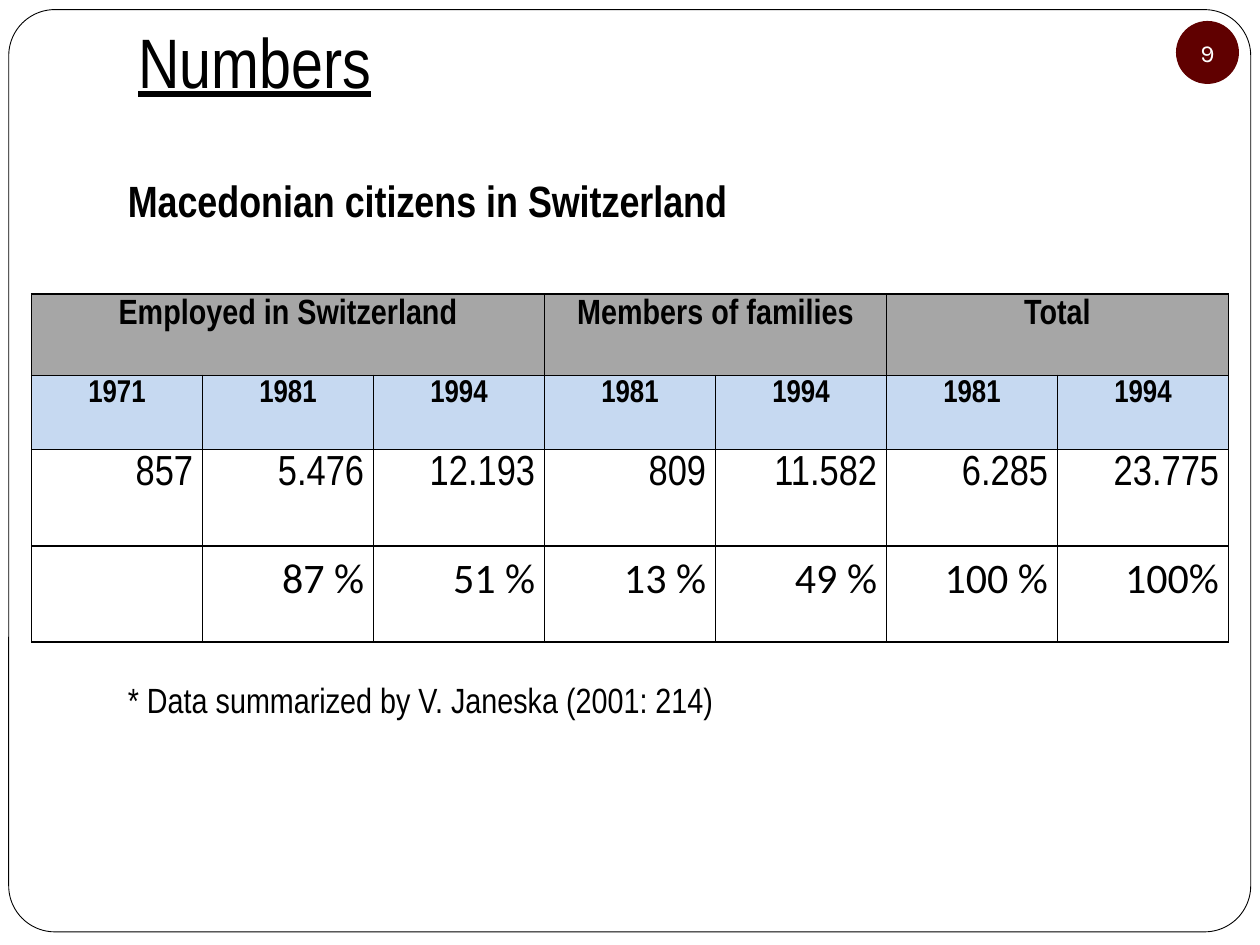
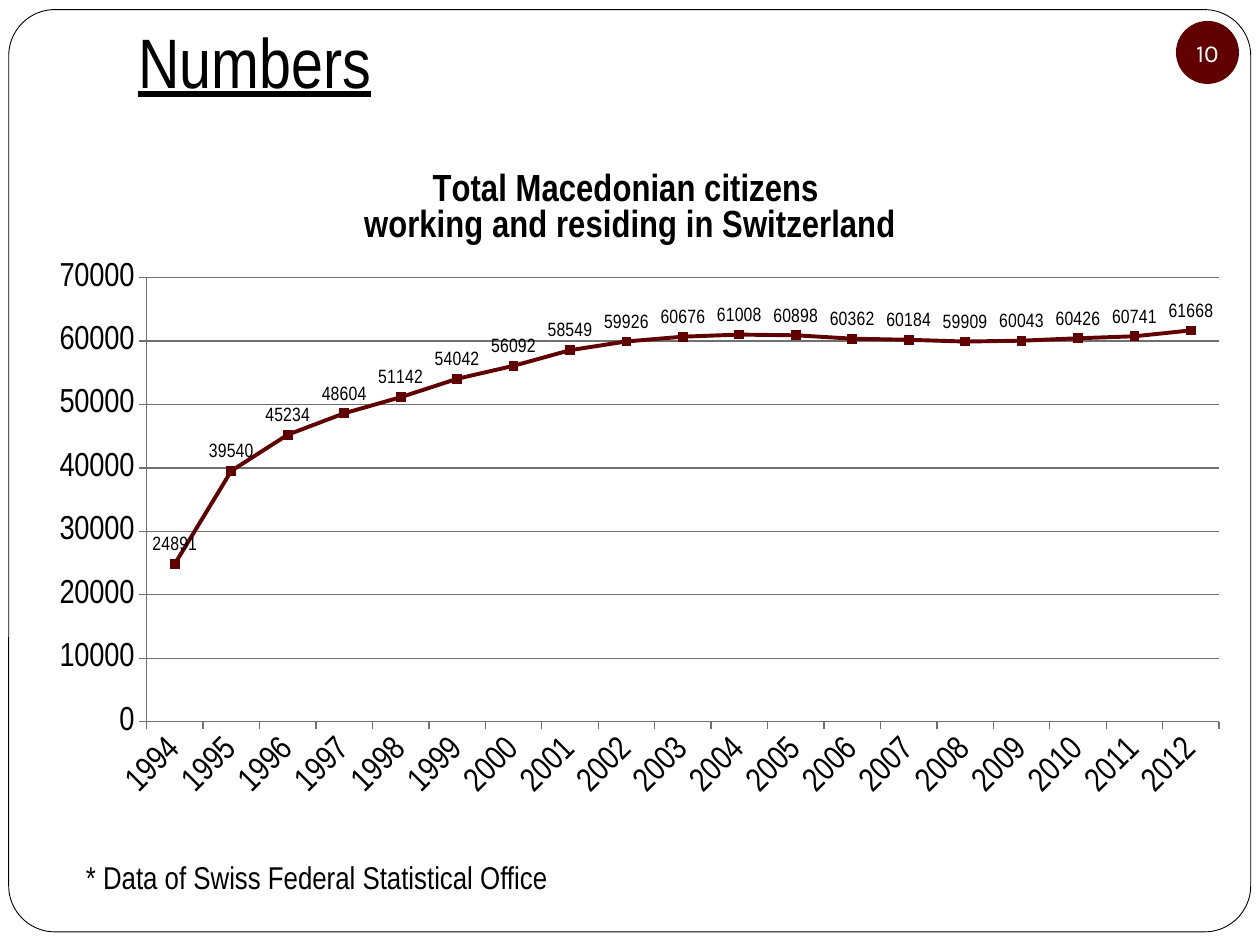
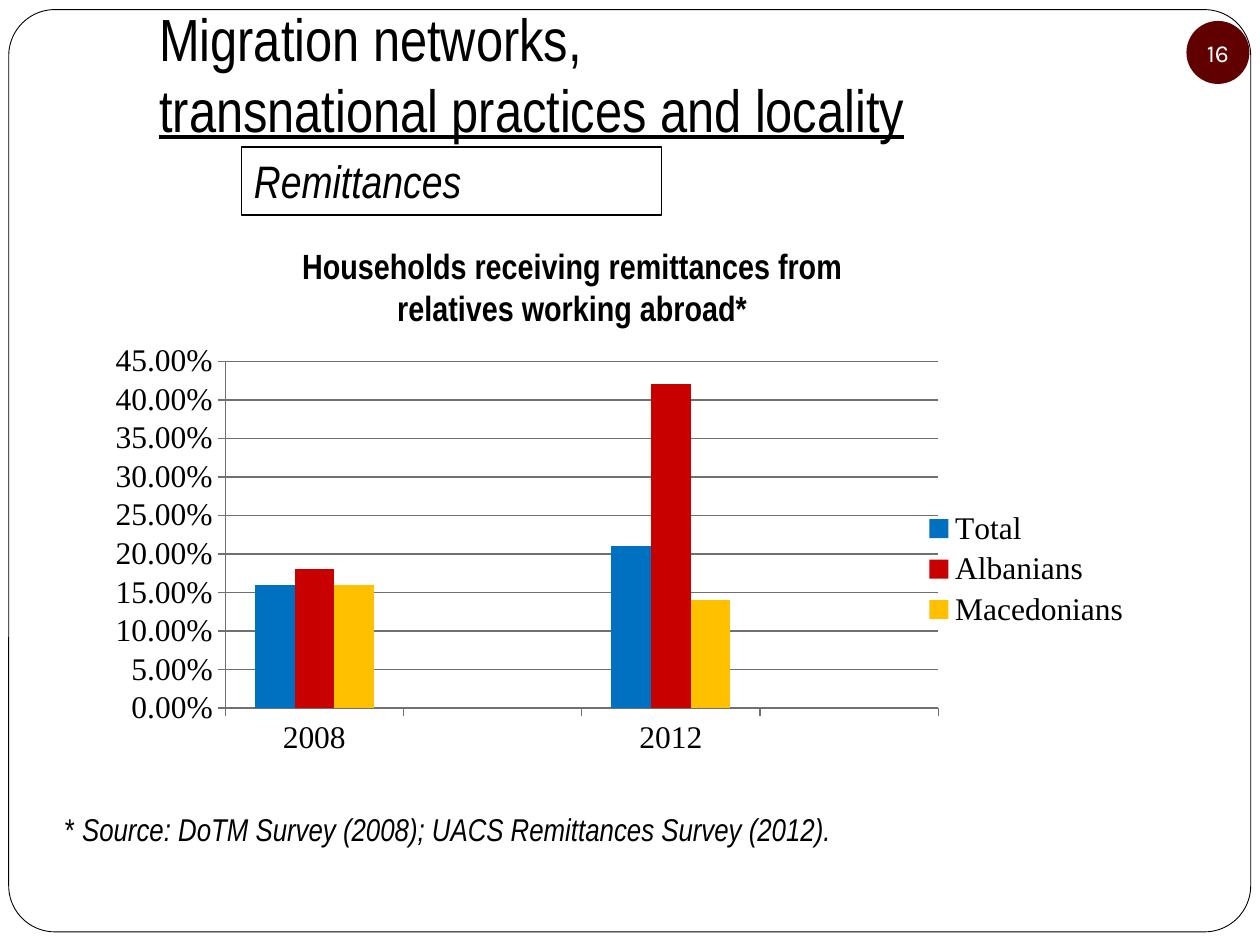
from lxml.etree import SubElement
from pptx import Presentation
from pptx.chart.data import CategoryChartData
from pptx.dml.color import RGBColor
from pptx.enum.chart import XL_CHART_TYPE as ChartType, XL_LABEL_POSITION as LabelPosition
from pptx.enum.chart import XL_LEGEND_POSITION as LegendPosition, XL_MARKER_STYLE as MarkerStyle
from pptx.enum.chart import XL_TICK_MARK as TickMark
from pptx.enum.shapes import MSO_SHAPE as Shape
from pptx.enum.text import MSO_ANCHOR as Anchor, PP_ALIGN as Align
from pptx.oxml import parse_xml
from pptx.oxml.ns import nsdecls, qn
from pptx.util import Pt

# Shared style
COLORS = {
    "text": "000000", "paper": "FFFFFF", "accent": "600000", "grid": "707070",
    "head": "A6A6A6", "years": "C6D9F1",
    "total": "0070C0", "albanians": "C80000", "macedonians": "FFC000",
}
NARROW, SERIF, BADGE_FONT, PERCENT_FONT = "Arial Narrow", "Times New Roman", "Karla", "Calibri"
TEXT_MARGINS = (7.2, 3.6, 7.2, 3.6)
TITLE_MARGINS = (7.2, 3.6, 7.2, 7.2)
FRAME_BOX = (5, 5.5, 709.7, 527)
NUMBERS_TITLE_BOX = (72, 6, 612, 60)

# Content: citizens table
GROUPS = [("Employed in Switzerland", 3), ("Members of families", 2), ("Total", 2)]
YEARS = ["1971", "1981", "1994", "1981", "1994", "1981", "1994"]
COUNTS = ["857", "5.476", "12.193", "809", "11.582", "6.285", "23.775"]
SHARES = ["", "87 %", "51 %", "13 %", "49 %", "100 %", "100%"]
ROW_HEIGHTS = [46.5, 42.3, 55.1, 55.1]
TABLE_BOX = (18, 168, 684, sum(ROW_HEIGHTS))

# Content: citizens by year
CITIZENS_TITLE = ["Total Macedonian citizens ", "working and residing in Switzerland"]
CITIZENS = [24891, 39540, 45234, 48604, 51142, 54042, 56092, 58549, 59926, 60676,
            61008, 60898, 60362, 60184, 59909, 60043, 60426, 60741, 61668]
CITIZEN_YEARS = [str(1994 + index) for index in range(len(CITIZENS))]

# Content: remittances
SURVEYS = ["2008", "", "2012", ""]
HOUSEHOLDS = [
    ("Total", [0.16, None, 0.21, None], "total"),
    ("Albanians", [0.18, None, 0.42, None], "albanians"),
    ("Macedonians", [0.16, None, 0.14, None], "macedonians"),
]


def color(name):
    return RGBColor.from_string(COLORS[name])


def points(box):
    return [Pt(length) for length in box]


def style_font(font, size, name=NARROW, color_name="text", bold=False, italic=False):
    font.size, font.name, font.bold, font.italic = Pt(size), name, bold, italic
    font.color.rgb = color(color_name)


def set_margins(target, margins):
    (target.margin_left, target.margin_top,
     target.margin_right, target.margin_bottom) = points(margins)


def write_text(shape, text, size, align=Align.LEFT, anchor=Anchor.TOP,
               margins=TEXT_MARGINS, wrap=True, **style):
    frame = shape.text_frame
    frame.word_wrap, frame.vertical_anchor = wrap, anchor
    set_margins(frame, margins)
    paragraph = frame.paragraphs[0]
    paragraph.text, paragraph.alignment = text, align
    style_font(paragraph.font, size, **style)
    return paragraph


def add_text(slide, box, text, size, **style):
    return write_text(slide.shapes.add_textbox(*points(box)), text, size, **style)


def add_shape(slide, preset, box, fill, line_width=0):
    shape = slide.shapes.add_shape(preset, *points(box))
    shape.shadow.inherit = False
    shape.fill.solid()
    shape.fill.fore_color.rgb = color(fill)
    if line_width:
        shape.line.width = Pt(line_width)
        shape.line.color.rgb = color("text")
    else:
        shape.line.fill.background()
    return shape


def add_framed_slide(presentation):
    slide = presentation.slides.add_slide(presentation.slide_layouts[6])
    add_shape(slide, Shape.ROUNDED_RECTANGLE, FRAME_BOX, "paper", 0.5).adjustments[0] = 0.05
    return slide


def add_title(slide, box, underlined, size, lead=""):
    paragraph = add_text(slide, box, lead, size, anchor=Anchor.BOTTOM, margins=TITLE_MARGINS)
    if lead:
        paragraph.add_line_break()
    run = paragraph.add_run()
    run.text, run.font.underline = underlined, True


def add_badge(slide, number, left=672):
    badge = add_shape(slide, Shape.OVAL, (left, 12, 36, 36), "accent")
    write_text(badge, str(number), 14, Align.CENTER, Anchor.MIDDLE, (0, 0, 0, 0),
               wrap=False, name=BADGE_FONT, color_name="paper")


# Table
def add_borders(cell):
    properties = cell._tc.get_or_add_tcPr()
    for index, side in enumerate(("lnL", "lnR", "lnT", "lnB")):
        properties.insert(index, parse_xml(
            f'<a:{side} {nsdecls("a")} w="{Pt(1)}"><a:solidFill>'
            f'<a:srgbClr val="{COLORS["text"]}"/></a:solidFill></a:{side}>'))


def fill_cell(cell, text, size, align, fill=None, **style):
    set_margins(cell, (5.4, 0, 5.4, 0))
    if fill:
        cell.fill.solid()
        cell.fill.fore_color.rgb = color(fill)
    else:
        cell.fill.background()
    paragraph = cell.text_frame.paragraphs[0]
    paragraph.text, paragraph.alignment, paragraph.line_spacing = text, align, 1.15
    style_font(paragraph.font, size, **style)
    add_borders(cell)


def add_citizens_table(slide):
    table = slide.shapes.add_table(len(ROW_HEIGHTS), len(YEARS), *points(TABLE_BOX)).table
    table.first_row = table.horz_banding = False
    for column in table.columns:
        column.width = Pt(TABLE_BOX[2] / len(YEARS))
    for row, height in zip(table.rows, ROW_HEIGHTS):
        row.height = Pt(height)
    heads = [text for name, span in GROUPS for text in [name] + [""] * (span - 1)]
    rows = [
        (heads, dict(size=20, align=Align.CENTER, fill="head", bold=True)),
        (YEARS, dict(size=18, align=Align.CENTER, fill="years", bold=True)),
        (COUNTS, dict(size=24, align=Align.RIGHT)),
        (SHARES, dict(size=24, align=Align.RIGHT, name=PERCENT_FONT)),
    ]
    for row_index, (texts, style) in enumerate(rows):
        for column_index, text in enumerate(texts):
            fill_cell(table.cell(row_index, column_index), text, **style)
    start = 0
    for _, span in GROUPS:
        table.cell(0, start).merge(table.cell(0, start + span - 1))
        start += span


# Charts
def set_plot_layout(chart, box):
    plot_area = chart._chartSpace.chart.plotArea
    for layout in plot_area.findall(qn("c:layout")):
        plot_area.remove(layout)
    layout = parse_xml(f'<c:layout {nsdecls("c")}><c:manualLayout/></c:layout>')
    settings = [("layoutTarget", "inner"), ("xMode", "edge"), ("yMode", "edge")]
    for tag, value in settings + list(zip("xywh", box)):
        SubElement(layout[0], qn(f"c:{tag}")).set("val", str(value))
    plot_area.insert(0, layout)


def add_chart(slide, kind, box, categories, series, plot_box, top, step, number_format,
              axis_size, axis_font):
    data = CategoryChartData()
    data.categories = categories
    for name, values, _ in series:
        data.add_series(name, values)
    chart = slide.shapes.add_chart(kind, *points(box), data).chart
    style_font(chart.font, 18, SERIF)
    chart.has_title = chart.has_legend = False
    chart.plots[0].vary_by_categories = False
    set_plot_layout(chart, plot_box)
    for axis in (chart.category_axis, chart.value_axis):
        axis.major_tick_mark, axis.minor_tick_mark = TickMark.OUTSIDE, TickMark.NONE
        axis.format.line.color.rgb = color("grid")
        style_font(axis.tick_labels.font, axis_size, axis_font)
    values = chart.value_axis
    values.minimum_scale, values.maximum_scale, values.major_unit = 0, top, step
    values.tick_labels.number_format = number_format
    values.tick_labels.number_format_is_linked = False
    values.major_gridlines.format.line.color.rgb = color("grid")
    return chart


def add_citizens_chart(slide):
    chart = add_chart(slide, ChartType.LINE_MARKERS, (18.2, 84.2, 684, 396), CITIZEN_YEARS,
                      [("Series 1", CITIZENS, "accent")], (0.096, 0.188, 0.896, 0.641),
                      70000, 10000, "General", 19, NARROW)
    chart.has_title = True
    frame = chart.chart_title.text_frame
    chart.chart_title.include_in_layout = False
    for index, text in enumerate(CITIZENS_TITLE):
        paragraph = frame.add_paragraph() if index else frame.paragraphs[0]
        paragraph.text = text
        style_font(paragraph.font, 21.6, bold=True)
    chart.category_axis._element.find(qn("c:txPr")).find(qn("a:bodyPr")).set("rot", "-2700000")
    series = chart.plots[0].series[0]
    series.smooth = False
    series.format.line.width = Pt(2.25)
    series.marker.style, series.marker.size = MarkerStyle.SQUARE, 5
    for part in (series.format.line, series.marker.format.line):
        part.color.rgb = color("accent")
    series.marker.format.fill.solid()
    series.marker.format.fill.fore_color.rgb = color("accent")
    labels = series.data_labels
    labels.show_value, labels.position = True, LabelPosition.ABOVE
    style_font(labels.font, 11)


def add_households_chart(slide):
    chart = add_chart(slide, ChartType.COLUMN_CLUSTERED, (65.8, 196.2, 588, 258), SURVEYS,
                      HOUSEHOLDS, (0.107, 0.04, 0.693, 0.768), 0.45, 0.05, "0.00%", 18, SERIF)
    chart.has_legend = True
    chart.legend.position, chart.legend.include_in_layout = LegendPosition.RIGHT, False
    style_font(chart.legend.font, 18, SERIF)
    chart.plots[0].gap_width, chart.plots[0].overlap = 150, 0
    for series, (_, _, color_name) in zip(chart.plots[0].series, HOUSEHOLDS):
        series.format.fill.solid()
        series.format.fill.fore_color.rgb = color(color_name)


# Slides
def build_table_slide(presentation):
    slide = add_framed_slide(presentation)
    add_title(slide, NUMBERS_TITLE_BOX, "Numbers", 40)
    add_citizens_table(slide)
    add_text(slide, (66, 384, 546, 31.5), "* Data summarized by V. Janeska (2001: 214)", 20)
    add_text(slide, (66, 96, 546, 37.5), "Macedonian citizens in Switzerland", 25, bold=True)
    add_badge(slide, 9)


def build_citizens_slide(presentation):
    slide = add_framed_slide(presentation)
    add_citizens_chart(slide)
    add_title(slide, NUMBERS_TITLE_BOX, "Numbers", 40)
    add_text(slide, (42, 486.5, 546, 29), "* Data of Swiss Federal Statistical Office", 18)
    add_badge(slide, 10)


def build_remittances_slide(presentation):
    slide = add_framed_slide(presentation)
    add_households_chart(slide)
    add_title(slide, (84, 6, 612, 84), "transnational practices and locality", 34,
              lead="Migration networks, ")
    topic = add_shape(slide, Shape.RECTANGLE, (138, 84, 240, 39), "paper", 1)
    write_text(topic, "Remittances", 26, italic=True)
    add_text(slide, (162, 136, 330, 55.5),
             "Households receiving remittances from relatives working abroad*", 20,
             align=Align.CENTER, bold=True)
    source = add_text(slide, (30, 459.5, 660, 29), "* ", 18)
    run = source.add_run()
    run.text = "Source: DoTM Survey (2008); UACS Remittances Survey (2012)."
    run.font.italic = True
    add_badge(slide, 16, left=678)


def main():
    presentation = Presentation()
    presentation.slide_width, presentation.slide_height = Pt(720), Pt(540)
    build_table_slide(presentation)
    build_citizens_slide(presentation)
    build_remittances_slide(presentation)
    presentation.save("out.pptx")


if __name__ == "__main__":
    main()
